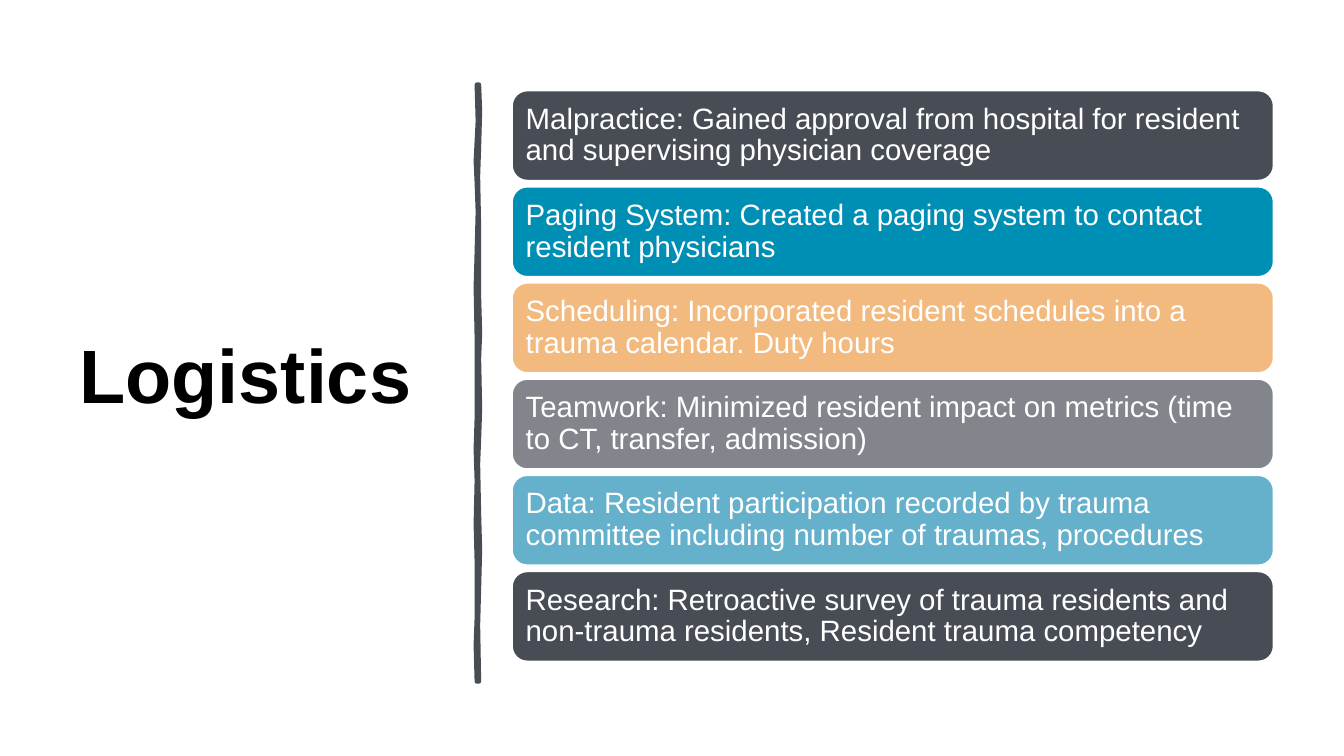
from pptx import Presentation
from pptx.dml.color import RGBColor
from pptx.enum.shapes import MSO_SHAPE as Shape
from pptx.enum.text import MSO_ANCHOR as Anchor, PP_ALIGN as Align
from pptx.util import Inches, Pt

BLACK = RGBColor(0x00, 0x00, 0x00)
WHITE = RGBColor(0xFF, 0xFF, 0xFF)
SLATE = RGBColor(0x47, 0x4C, 0x55)
TEAL = RGBColor(0x00, 0x8F, 0xB4)
APRICOT = RGBColor(0xF2, 0xBA, 0x7F)
GREY = RGBColor(0x82, 0x85, 0x8C)
SKY = RGBColor(0x65, 0xB0, 0xCA)

TOPICS = [
    ("Malpractice: Gained approval from hospital for resident and supervising physician coverage", SLATE),
    ("Paging System: Created a paging system to contact resident physicians", TEAL),
    ("Scheduling: Incorporated resident schedules into a trauma calendar. Duty hours", APRICOT),
    ("Teamwork: Minimized resident impact on metrics (time to CT, transfer, admission)", GREY),
    ("Data: Resident participation recorded by trauma committee including number of traumas, procedures", SKY),
    ("Research: Retroactive survey of trauma residents and non-trauma residents, "
     "Resident trauma competency", SLATE),
]
CARD_TOP, CARD_BOTTOM, CARD_HEIGHT = 0.9, 6.56, 0.89
CARD_PITCH = (CARD_BOTTOM - CARD_HEIGHT - CARD_TOP) / (len(TOPICS) - 1)

# Hand-drawn divider: down the right edge, back up the left one
DIVIDER = [
    (4.75, 0.84), (4.76, 1.1), (4.75, 1.46), (4.74, 1.75), (4.75, 2.26), (4.75, 2.94),
    (4.76, 3.3), (4.75, 3.56), (4.76, 4.05), (4.75, 4.36), (4.74, 4.6), (4.75, 5.1),
    (4.76, 5.45), (4.75, 5.84), (4.74, 6.2), (4.75, 6.76),
    (4.73, 6.76), (4.72, 6.4), (4.73, 6.13), (4.73, 5.57), (4.72, 5.2), (4.73, 4.77),
    (4.72, 4.45), (4.73, 4.15), (4.73, 3.35), (4.72, 2.85), (4.73, 2.5), (4.74, 2.1),
    (4.73, 1.81), (4.72, 1.6), (4.74, 1.2), (4.73, 0.84),
]


class SlideMaker:
    """Holds the text style and the slide being filled."""

    font = "Arial"
    line_spacing = 0.9

    def __init__(self, slide):
        self.shapes = slide.shapes

    def set_text(self, frame, text, size, color, bold=False):
        frame.word_wrap = True
        frame.vertical_anchor = Anchor.MIDDLE
        frame.text = text
        line = frame.paragraphs[0]
        line.alignment = Align.LEFT
        line.line_spacing = self.line_spacing
        font = line.runs[0].font
        font.name, font.size, font.bold = self.font, Pt(size), bold
        font.color.rgb = color

    def paint(self, shape, fill, line, width):
        shape.shadow.inherit = False
        shape.fill.solid()
        shape.fill.fore_color.rgb = fill
        shape.line.color.rgb = line
        shape.line.width = Pt(width)

    def title(self, text, left, top, width, height):
        heading = self.shapes.add_textbox(Inches(left), Inches(top), Inches(width), Inches(height))
        self.set_text(heading.text_frame, text, 54, BLACK, bold=True)

    def outline(self, points, color, width):
        start, *rest = [(Inches(x), Inches(y)) for x, y in points]
        builder = self.shapes.build_freeform(*start)
        builder.add_line_segments(rest, close=True)
        self.paint(builder.convert_to_shape(), color, color, width)

    def card(self, text, fill, left, top, width, height):
        card = self.shapes.add_shape(
            Shape.ROUNDED_RECTANGLE, Inches(left), Inches(top), Inches(width), Inches(height))
        self.paint(card, fill, WHITE, 1)
        frame = card.text_frame
        # The rounded corners already inset the text by about 0.04
        frame.margin_left = frame.margin_right = Inches(0.09)
        frame.margin_top = frame.margin_bottom = Inches(0.05)
        self.set_text(frame, text, 21, WHITE)


def main():
    deck = Presentation()
    deck.slide_width, deck.slide_height = Inches(13.33), Inches(7.5)
    maker = SlideMaker(deck.slides.add_slide(deck.slide_layouts[6]))

    # Heading and divider
    maker.title("Logistics", 0.69, 0.7, 3.74, 6.11)
    maker.outline(DIVIDER, SLATE, 3.25)

    # Stack of topics
    for row, (topic, fill) in enumerate(TOPICS):
        maker.card(topic, fill, 5.08, CARD_TOP + row * CARD_PITCH, 7.55, CARD_HEIGHT)

    deck.save("out.pptx")


if __name__ == "__main__":
    main()
